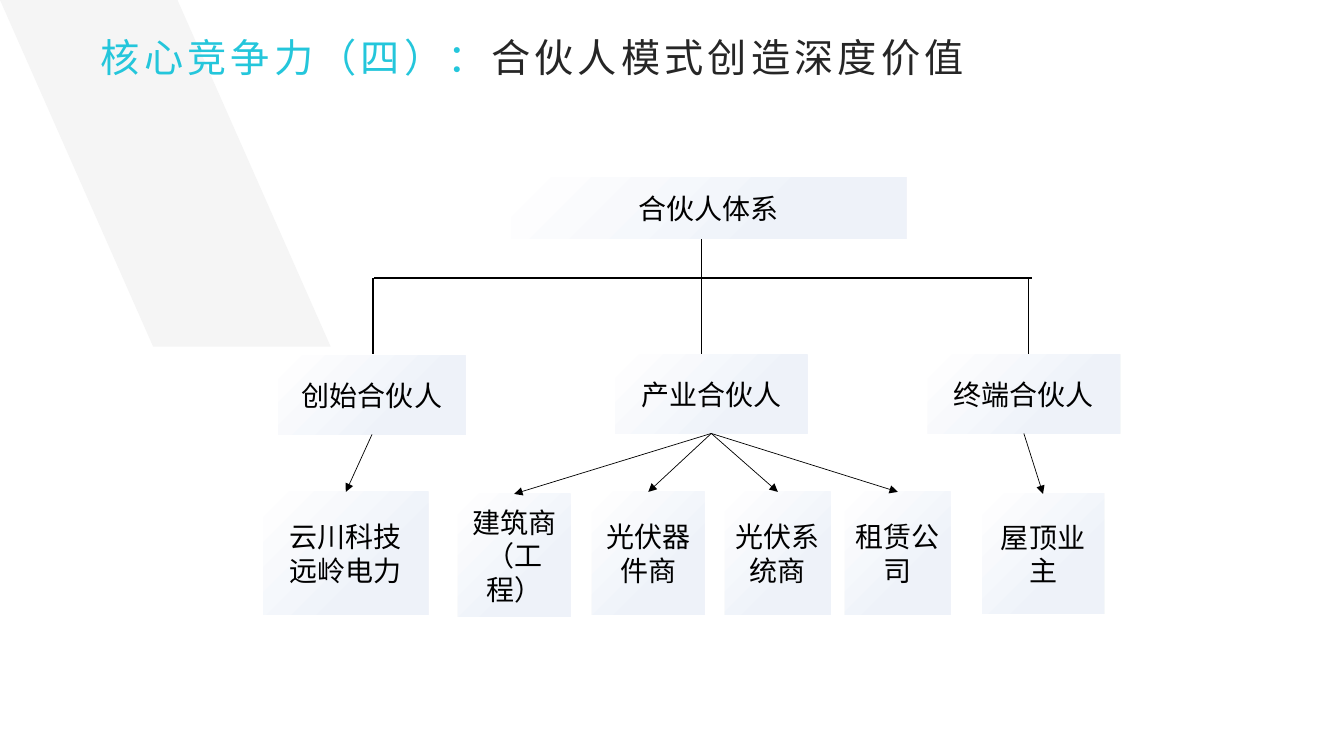
from lxml.etree import SubElement
from pptx import Presentation
from pptx.dml.color import RGBColor
from pptx.enum.shapes import MSO_CONNECTOR, MSO_SHAPE
from pptx.enum.text import MSO_ANCHOR, MSO_AUTO_SIZE, PP_ALIGN
from pptx.oxml.ns import qn
from pptx.util import Inches, Pt

FONT = "Noto Sans CJK SC"
BLACK = "000000"
TOP, BOTTOM = 0, 2
BUS_Y = 2.76
STEM_END = 3.51

ROOT = (["合伙人体系"], 5.07, 1.76, 3.92, 0.61)
# Each branch: its own box, then the boxes of its partners
BRANCHES = [
    ((["创始合伙人"], 2.76, 3.53, 1.86, 0.78),
     [(["云川科技", "远岭电力"], 2.61, 4.88, 1.64, 1.22)]),
    ((["产业合伙人"], 6.1, 3.52, 1.91, 0.78),
     [(["建筑商（工程）"], 4.54, 4.9, 1.12, 1.22),
      (["光伏器件商"], 5.87, 4.88, 1.12, 1.22),
      (["光伏系统商"], 7.19, 4.88, 1.05, 1.22),
      (["租赁公司"], 8.38, 4.88, 1.05, 1.22)]),
    ((["终端合伙人"], 9.2, 3.52, 1.91, 0.78),
     [(["屋顶业主"], 9.74, 4.9, 1.21, 1.19)]),
]
# x, start and end of the vertical lines around the bus
STEMS = [(6.96, 2.37, BUS_Y)] + [(x, BUS_Y, STEM_END) for x in (3.7, 6.96, 10.2)]


def color(hex_value):
    return RGBColor.from_string(hex_value)


def add_run(paragraph, text, size, hex_value, spacing=0):
    run = paragraph.add_run()
    run.text = text
    run.font.size = Pt(size)
    run.font.name = FONT
    run.font.color.rgb = color(hex_value)
    properties = run.font._element
    SubElement(properties, qn("a:ea"), typeface=FONT)
    if spacing:
        properties.set("spc", str(spacing * 100))


def add_title(slide):
    title = slide.shapes.title
    title.left, title.top = Inches(0.9), Inches(0.28)
    title.width, title.height = Inches(8.9), Inches(0.57)
    frame = title.text_frame
    frame.auto_size = MSO_AUTO_SIZE.NONE
    frame.word_wrap = False
    frame.vertical_anchor = MSO_ANCHOR.MIDDLE
    heading = frame.paragraphs[0]
    heading.alignment = PP_ALIGN.LEFT
    heading.line_spacing = 1.0
    add_run(heading, "核心竞争力（四）：", 28, "24C6DB", 3)
    add_run(heading, "合伙人模式创造深度价值", 28, "262626", 3)


def add_backdrop(slide):
    """Pale slanted band behind the title."""
    outline = slide.shapes.build_freeform(Inches(1.76), 0)
    corners = [(0, 0), (1.52, 3.44), (3.28, 3.44)]
    outline.add_line_segments([(Inches(x), Inches(y)) for x, y in corners])
    band = outline.convert_to_shape()
    band.shadow.inherit = False
    band.fill.solid()
    band.fill.fore_color.rgb = color("F5F5F5")
    band.line.fill.background()
    slide.shapes.title.element.addprevious(band.element)


def add_box(slide, lines, left, top, width, height):
    box = slide.shapes.add_shape(MSO_SHAPE.RECTANGLE, Inches(left), Inches(top),
                                 Inches(width), Inches(height))
    box.shadow.inherit = False
    box.line.fill.background()
    box.fill.gradient()
    box.fill.gradient_angle = 315
    for stop, position, tint in zip(box.fill.gradient_stops, (0, 0.7), ("FFFFFF", "EEF2F9")):
        stop.position = position
        stop.color.rgb = color(tint)
    frame = box.text_frame
    frame.word_wrap = True
    frame.vertical_anchor = MSO_ANCHOR.MIDDLE
    for index, line in enumerate(lines):
        paragraph = frame.add_paragraph() if index else frame.paragraphs[0]
        paragraph.alignment = PP_ALIGN.CENTER
        add_run(paragraph, line, 20, BLACK)
    return box


def add_line(slide, start=(0, 0), end=(0, 0), width=1):
    line = slide.shapes.add_connector(MSO_CONNECTOR.STRAIGHT,
                                      *(Inches(value) for value in (*start, *end)))
    line.line.color.rgb = color(BLACK)
    line.line.width = Pt(width)
    SubElement(line.element.spPr, qn("a:effectLst"))
    return line


def add_arrow(slide, branch, partner):
    arrow = add_line(slide, width=0.5)
    arrow.begin_connect(branch, BOTTOM)
    arrow.end_connect(partner, TOP)
    SubElement(arrow.line._get_or_add_ln(), qn("a:tailEnd"), type="triangle")


def main():
    deck = Presentation()
    deck.slide_width, deck.slide_height = Inches(13.33), Inches(7.5)
    slide = deck.slides.add_slide(deck.slide_layouts[5])
    add_title(slide)
    add_backdrop(slide)

    add_line(slide, (3.71, BUS_Y), (10.24, BUS_Y))
    for x, start, end in STEMS:
        add_line(slide, (x, start), (x, end))

    add_box(slide, *ROOT)
    for branch_spec, partner_specs in BRANCHES:
        branch = add_box(slide, *branch_spec)
        for partner_spec in partner_specs:
            add_arrow(slide, branch, add_box(slide, *partner_spec))

    deck.save("out.pptx")


if __name__ == "__main__":
    main()
